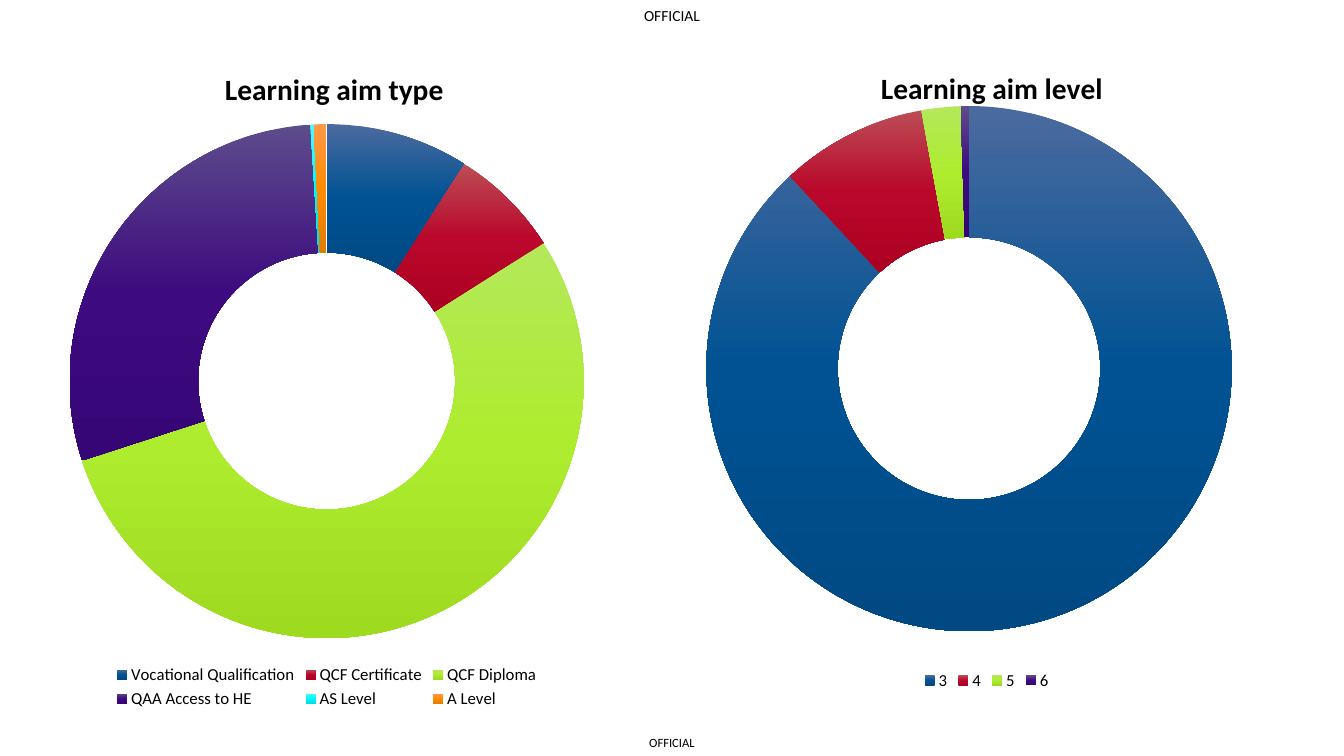
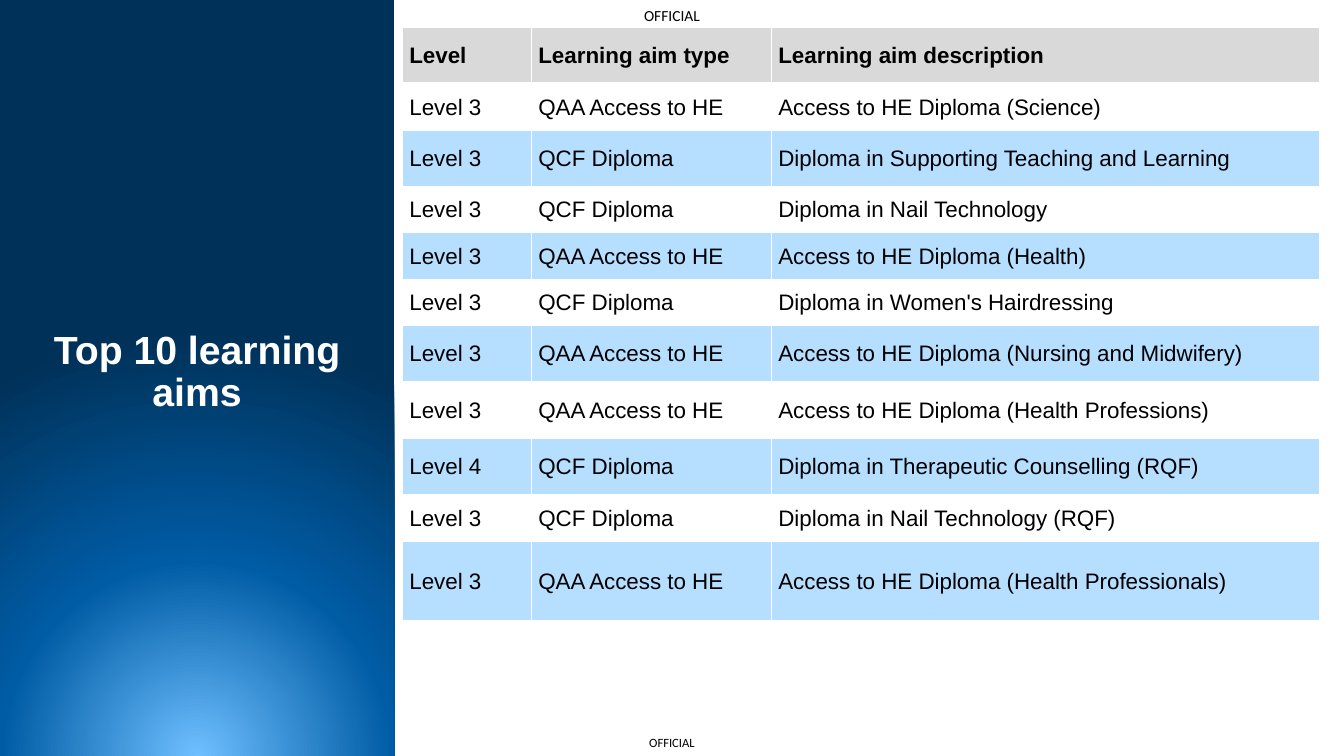
from dataclasses import dataclass

from lxml.etree import SubElement
from pptx import Presentation
from pptx.chart.data import CategoryChartData
from pptx.dml.color import RGBColor
from pptx.enum.chart import XL_CHART_TYPE, XL_LEGEND_POSITION
from pptx.enum.text import MSO_ANCHOR, MSO_AUTO_SIZE, PP_ALIGN
from pptx.oxml import parse_xml
from pptx.oxml.ns import nsdecls, qn
from pptx.util import Inches, Pt


@dataclass(frozen=True)
class Theme:
    heading_font: str = "Arial"
    chart_font: str = "Calibri"
    black: RGBColor = RGBColor.from_string("000000")
    white: RGBColor = RGBColor.from_string("FFFFFF")
    header_grey: RGBColor = RGBColor.from_string("D9D9D9")
    band_blue: RGBColor = RGBColor.from_string("B6DFFF")
    panel: tuple = ((0, "6EBFFF"), (46, "005CA5"), (100, "003158"))
    slices: tuple = (
        ("4B6A9F", "005293", "004983"),
        ("BC4C55", "B9082B", "AC0022"),
        ("B4E85A", "AEEC2F", "9EDB20"),
        ("5D4C8B", "3D0B7F", "360576"),
        ("4BFCFF", "00F8FB", "00DCDF"),
        ("FF984B", "FF8C00", "E37C00"),
    )
    title_size: Pt = Pt(28)
    chart_title_size: Pt = Pt(21)
    table_size: Pt = Pt(16)
    legend_size: Pt = Pt(12)
    chart_size: Pt = Pt(10)
    header_size: Pt = Pt(11)
    footer_size: Pt = Pt(9)


theme = Theme()


def set_gradient(gradient, stops, direction):
    for child in list(gradient):
        gradient.remove(child)
    stop_list = SubElement(gradient, qn("a:gsLst"))
    for position, colour in stops:
        stop = SubElement(stop_list, qn("a:gs"), pos=str(position * 1000))
        SubElement(stop, qn("a:srgbClr"), val=colour)
    gradient.append(parse_xml(direction))


def style_run(run, font, size, colour, bold=False):
    run.font.name = font
    run.font.size = size
    run.font.color.rgb = colour
    run.font.bold = bold


prs = Presentation()
prs.slide_width, prs.slide_height = Inches(13.33), Inches(7.5)
title_only, blank = prs.slide_layouts[5], prs.slide_layouts[6]

chart_slide = prs.slides.add_slide(blank)

for left, top, width, height, size in (
    (6.23, 0, 0.87, 0.31, theme.header_size),
    (6.3, 7.23, 0.73, 0.27, theme.footer_size),
):
    marking = chart_slide.shapes.add_textbox(
        Inches(left), Inches(top), Inches(width), Inches(height))
    frame = marking.text_frame
    frame.word_wrap = True
    frame.vertical_anchor = MSO_ANCHOR.MIDDLE
    frame.margin_left = frame.margin_right = 0
    frame.margin_top = frame.margin_bottom = 0
    paragraph = frame.paragraphs[0]
    paragraph.alignment = PP_ALIGN.CENTER
    run = paragraph.add_run()
    run.text = "OFFICIAL"
    style_run(run, theme.chart_font, size, theme.black)
    prs.slide_master.shapes.element.append(marking.element)

doughnuts = (
    ("Learning aim level", (6.89, 0.36, 5.79, 6.53),
     {"3": 88, "4": 9, "5": 2.4, "6": 0.5},
     {"x": 0.31, "y": 0.04},
     {"x": 0.02, "y": 0.1, "w": 0.9, "h": 0.81}),
    ("Learning aim type", (-0.55, 0.36, 7.58, 6.71),
     {"Vocational Qualification": 9, "QCF Certificate": 7, "QCF Diploma": 54,
      "QAA Access to HE": 29, "AS Level": 0.2, "A Level": 0.8},
     {"x": 0.36, "y": 0.04},
     {"x": 0.16, "y": 0.13, "w": 0.68, "h": 0.76}),
)
downward = f'<a:lin {nsdecls("a")} ang="5400000" scaled="0"/>'

for heading, box, shares, title_place, plot_place in doughnuts:
    data = CategoryChartData()
    data.categories = list(shares)
    data.add_series("Series 1", list(shares.values()))
    chart = chart_slide.shapes.add_chart(
        XL_CHART_TYPE.DOUGHNUT, *map(Inches, box), data).chart
    chart.font.name = theme.chart_font
    chart.font.size = theme.chart_size
    chart.font.color.rgb = theme.black

    chart.has_title = True
    run = chart.chart_title.text_frame.paragraphs[0].add_run()
    run.text = heading
    style_run(run, theme.chart_font, theme.chart_title_size, theme.black, True)
    chart.chart_title.include_in_layout = False

    chart.has_legend = True
    legend = chart.legend
    legend.position = XL_LEGEND_POSITION.BOTTOM
    legend.include_in_layout = False
    legend.font.name = theme.chart_font
    legend.font.size = theme.legend_size
    legend.font.color.rgb = theme.black

    plot = chart.plots[0]
    plot.vary_by_categories = True
    plot.has_data_labels = False
    chart.element.find(".//" + qn("c:holeSize")).set("val", "75")
    for index in range(len(shares)):
        slice_format = plot.series[0].points[index].format
        slice_format.fill.gradient()
        slice_format.line.fill.background()
    gradients = list(chart.element.iter(qn("a:gradFill")))
    for gradient, colours in zip(gradients, theme.slices):
        set_gradient(gradient, zip((0, 50, 100), colours), downward)

    for owner_tag, before_tag, place in (
        ("c:title", "c:tx", title_place),
        ("c:plotArea", None, plot_place),
    ):
        owner = chart.element.find(".//" + qn(owner_tag))
        for old_layout in owner.findall(qn("c:layout")):
            owner.remove(old_layout)
        layout = parse_xml(f'<c:layout {nsdecls("c")}/>')
        manual = SubElement(layout, qn("c:manualLayout"))
        if "w" in place:
            SubElement(manual, qn("c:layoutTarget"), val="inner")
        for axis in ("x", "y"):
            SubElement(manual, qn(f"c:{axis}Mode"), val="edge")
        for key, value in place.items():
            SubElement(manual, qn(f"c:{key}"), val=str(value))
        if before_tag:
            owner.find(qn(before_tag)).addnext(layout)
        else:
            owner.insert(0, layout)

aims_slide = prs.slides.add_slide(title_only)
title = aims_slide.shapes.title
title.left, title.top = 0, 0
title.width, title.height = Inches(3.91), prs.slide_height
title.fill.gradient()
set_gradient(
    title.element.find(".//" + qn("a:gradFill")), theme.panel,
    f'<a:path {nsdecls("a")} path="circle">'
    '<a:fillToRect l="50000" t="130000" r="50000" b="-30000"/></a:path>')
frame = title.text_frame
frame.word_wrap = True
frame.auto_size = MSO_AUTO_SIZE.NONE
frame.vertical_anchor = MSO_ANCHOR.MIDDLE
frame.margin_top, frame.margin_bottom = 0, Inches(0.1)
paragraph = frame.paragraphs[0]
paragraph.alignment = PP_ALIGN.CENTER
paragraph.line_spacing = 0.9
run = paragraph.add_run()
run.text = "Top 10 learning aims"
style_run(run, theme.heading_font, theme.title_size, theme.white, True)

access, diploma = "QAA Access to HE", "QCF Diploma"
aims = (
    (0.56, "Level", "Learning aim type", "Learning aim description"),
    (0.46, "Level 3", access, "Access to HE Diploma (Science)"),
    (0.56, "Level 3", diploma, "Diploma in Supporting Teaching and Learning"),
    (0.46, "Level 3", diploma, "Diploma in Nail Technology"),
    (0.46, "Level 3", access, "Access to HE Diploma (Health)"),
    (0.46, "Level 3", diploma, "Diploma in Women's Hairdressing"),
    (0.56, "Level 3", access, "Access to HE Diploma (Nursing and Midwifery)"),
    (0.56, "Level 3", access, "Access to HE Diploma (Health Professions)"),
    (0.56, "Level 4", diploma, "Diploma in Therapeutic Counselling (RQF)"),
    (0.46, "Level 3", diploma, "Diploma in Nail Technology (RQF)"),
    (0.79, "Level 3", access, "Access to HE Diploma (Health Professionals)"),
)
column_widths = (1.28, 2.38, 5.44)
table = aims_slide.shapes.add_table(
    len(aims), len(column_widths), Inches(3.99), Inches(0.27),
    Inches(sum(column_widths)), Inches(sum(aim[0] for aim in aims))).table
table.horz_banding = False
for column, width in zip(table.columns, column_widths):
    column.width = Inches(width)

for row_index, (height, *texts) in enumerate(aims):
    table.rows[row_index].height = Inches(height)
    is_header = row_index == 0
    for column_index, text in enumerate(texts):
        cell = table.cell(row_index, column_index)
        cell.vertical_anchor = MSO_ANCHOR.MIDDLE
        cell.margin_left = Inches(0.07)
        cell.margin_top = cell.margin_right = Inches(0.01)
        cell.margin_bottom = 0
        run = cell.text_frame.paragraphs[0].add_run()
        run.text = text
        style_run(run, theme.heading_font, theme.table_size, theme.black, is_header)
        if is_header or row_index % 2 == 0:
            cell.fill.solid()
            cell.fill.fore_color.rgb = theme.header_grey if is_header else theme.band_blue
        else:
            cell.fill.background()
        properties = cell._tc.get_or_add_tcPr()
        for position, side in enumerate("LRTB"):
            heavy = (is_header and side == "B") or (row_index == 1 and side == "T")
            properties.insert(position, parse_xml(
                f'<a:ln{side} {nsdecls("a")} w="{Pt(3 if heavy else 1)}">'
                f'<a:solidFill><a:srgbClr val="{theme.white}"/></a:solidFill></a:ln{side}>'))

prs.save("out.pptx")
